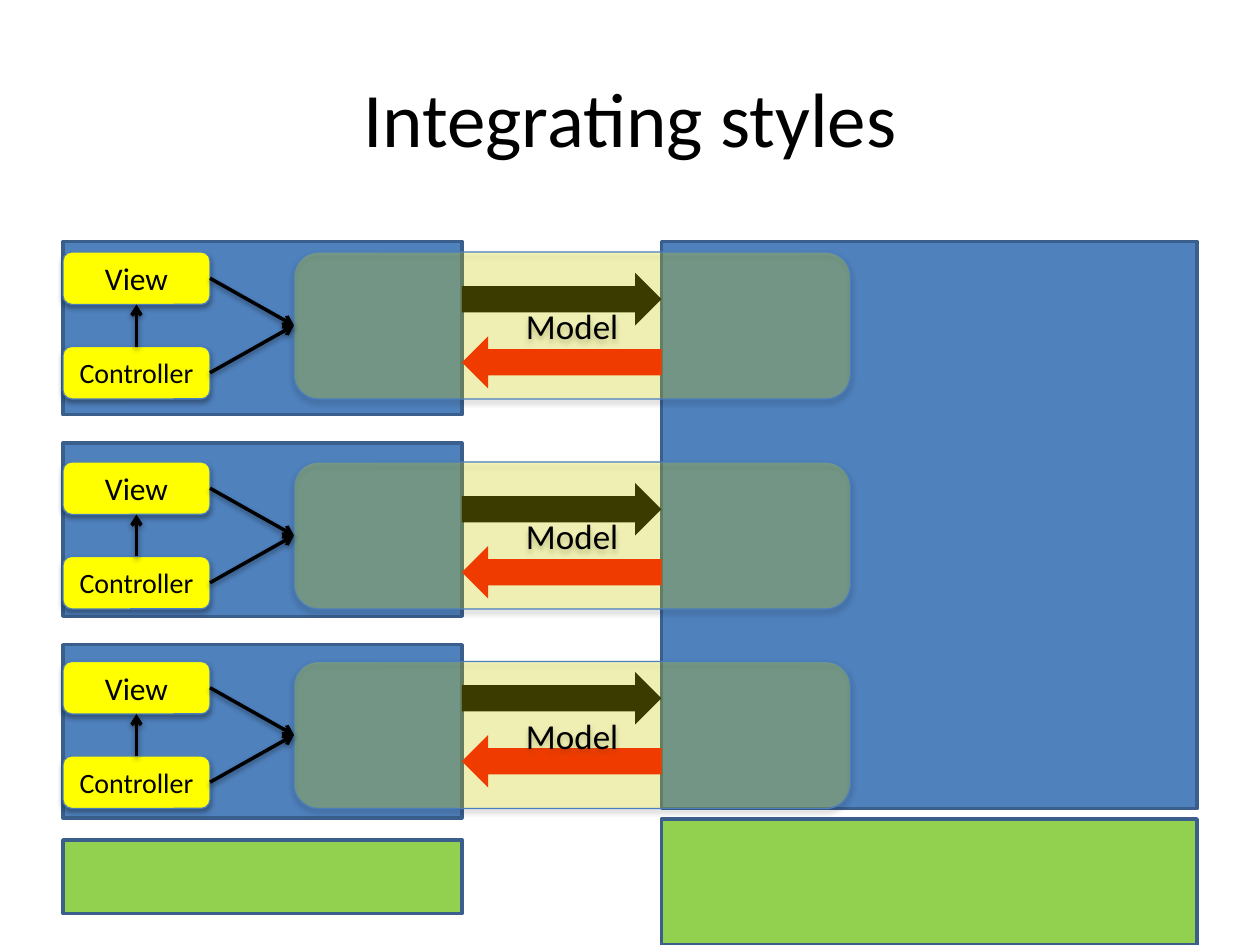
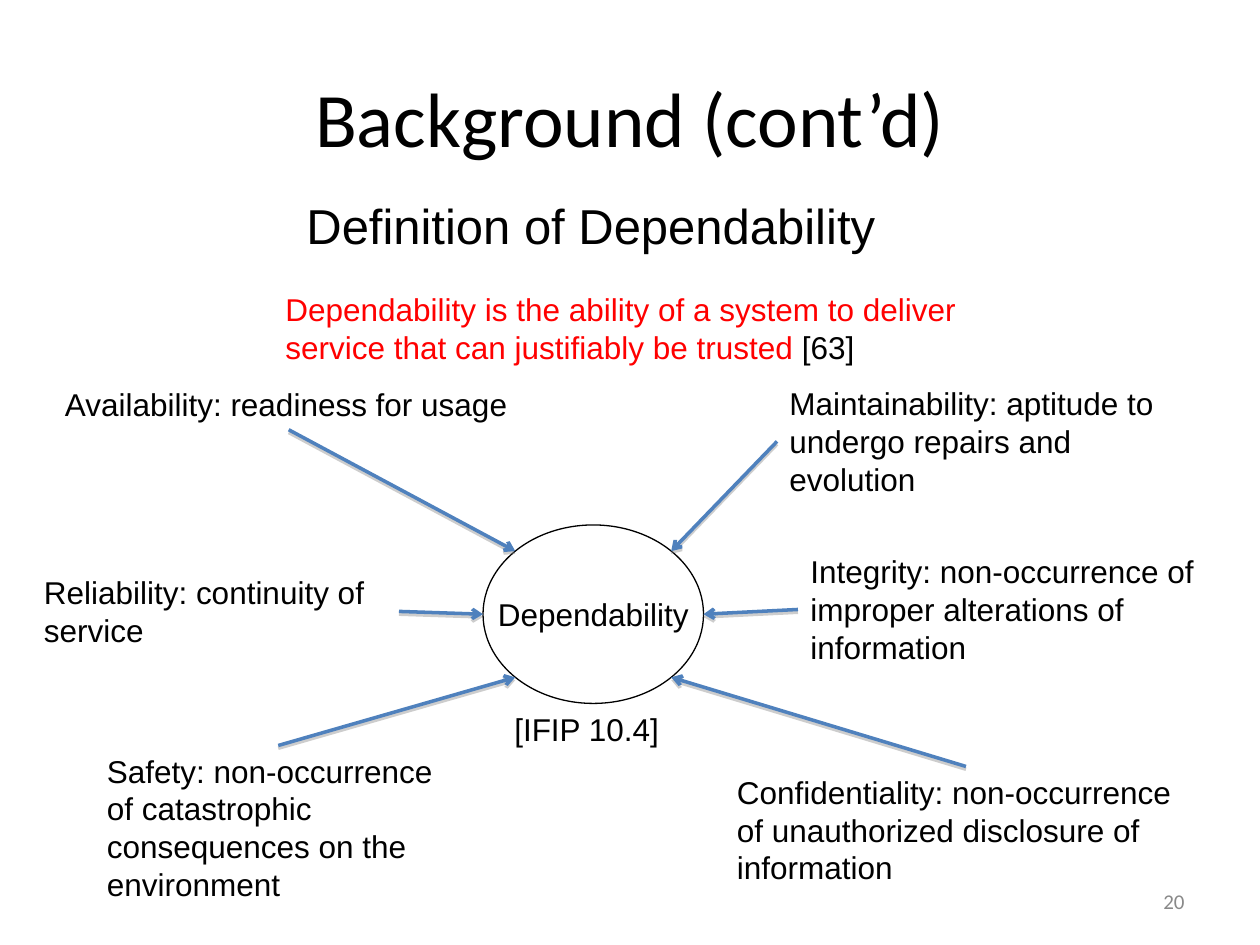
from collections import namedtuple
from math import cos, radians, sin

from lxml import etree
from pptx import Presentation
from pptx.dml.color import RGBColor
from pptx.enum.shapes import MSO_CONNECTOR, MSO_SHAPE
from pptx.enum.text import MSO_ANCHOR, PP_ALIGN
from pptx.oxml.ns import qn
from pptx.util import Inches, Pt

# Enum members
RECT, ROUNDED, OVAL = MSO_SHAPE.RECTANGLE, MSO_SHAPE.ROUNDED_RECTANGLE, MSO_SHAPE.OVAL
ARROW = MSO_SHAPE.RIGHT_ARROW
STRAIGHT = MSO_CONNECTOR.STRAIGHT
MIDDLE = MSO_ANCHOR.MIDDLE
LEFT_ALIGN, CENTER, RIGHT_ALIGN = PP_ALIGN.LEFT, PP_ALIGN.CENTER, PP_ALIGN.RIGHT
TOP_SIDE, LEFT_SIDE, BOTTOM_SIDE, RIGHT_SIDE = range(4)

# Colours and fonts
BLACK = RGBColor(0x00, 0x00, 0x00)
WHITE = RGBColor(0xFF, 0xFF, 0xFF)
RED = RGBColor(0xFF, 0x00, 0x00)
YELLOW = RGBColor(0xFF, 0xFF, 0x00)
GREEN = RGBColor(0x92, 0xD0, 0x50)
BLUE = RGBColor(0x4F, 0x81, 0xBD)
PANEL_EDGE = RGBColor(0x3A, 0x5F, 0x8C)
BOX_EDGE = RGBColor(0x4B, 0x7E, 0xBC)
GRAY = RGBColor(0x80, 0x80, 0x80)
NUMBER_GRAY = RGBColor(0x89, 0x89, 0x89)
HEADING_FONT, BODY_FONT = "Calibri", "Arial"

# Grid: 120 columns by 90 rows of equal square cells
WIDTH, HEIGHT = Inches(10), Inches(7.5)
CELL = WIDTH // 120
TITLE_ONLY = 5
Box = namedtuple("Box", "left top width height")
PAGE = Box(0, 0, 120, 90)
TITLE = Box(6, 3.6, 108, 15)
PAGE_NUMBER = Box(86, 83.4, 28, 4.8)


def inside(box, left, top, width, height):
    """Box at an offset from the corner of another box."""
    return Box(box.left + left, box.top + top, width, height)


def cells(values):
    return [round(value * CELL) for value in values]


def style_runs(para, size, font, color, align):
    para.alignment = align
    for span in para.runs:
        span.font.size = Pt(size)
        span.font.name = font
        span.font.color.rgb = color


def add_shadow(effects, color, opacity, blur, distance):
    shadow = etree.SubElement(effects, qn("a:outerShdw"), blurRad=str(Pt(blur)),
                              dist=str(Pt(distance)), dir="5400000", rotWithShape="0")
    tint = etree.SubElement(shadow, qn("a:srgbClr"), val=str(color))
    etree.SubElement(tint, qn("a:alpha"), val=str(opacity * 1000))


def add_block(page, kind, box, fill, edge=None, edge_width=2):
    shape = page.shapes.add_shape(kind, *cells(box))
    shape.shadow.inherit = False
    shape.fill.solid()
    shape.fill.fore_color.rgb = fill
    if edge is None:
        shape.line.fill.background()
    else:
        shape.line.color.rgb = edge
        shape.line.width = Pt(edge_width)
    return shape


def label_block(shape, text, size, font):
    frame = shape.text_frame
    frame.text = text
    frame.vertical_anchor = MIDDLE
    style_runs(frame.paragraphs[0], size, font, BLACK, CENTER)


def add_arrow(page, source, side, target, color, shadow_color, blur):
    """Arrow from a side of source to a (shape, side) pair or an (x, y) point."""
    joined = not isinstance(target[0], (int, float))
    end = (0, 0) if joined else cells(target)
    line = page.shapes.add_connector(STRAIGHT, 0, 0, *end)
    line.begin_connect(source, side)
    if joined:
        line.end_connect(*target)
    line.line.color.rgb = color
    line.line.width = Pt(2)
    properties = line.element.spPr
    etree.SubElement(properties.find(qn("a:ln")), qn("a:tailEnd"), type="arrow")
    add_shadow(etree.SubElement(properties, qn("a:effectLst")), shadow_color, 38, blur, 1.6)


def add_text(page, box, text, size=18, font=BODY_FONT, color=BLACK, align=LEFT_ALIGN):
    shape = page.shapes.add_textbox(*cells(box))
    frame = shape.text_frame
    frame.word_wrap = True
    frame.text = text
    for para in frame.paragraphs:
        style_runs(para, size, font, color, align)
    return shape


def add_page(deck, title):
    page = deck.slides.add_slide(deck.slide_layouts[TITLE_ONLY])
    heading = page.shapes.title
    heading.left, heading.top, heading.width, heading.height = cells(TITLE)
    heading.text_frame.text = title
    heading.text_frame.vertical_anchor = MIDDLE
    style_runs(heading.text_frame.paragraphs[0], 44, HEADING_FONT, BLACK, CENTER)
    return page


# Integrating styles

def add_panels(page, area):
    """Three client panels, one server panel and a green base under each side."""
    server = inside(area, 57, 0, 51, 54)
    clients = [inside(area, 0, 19.2 * row, 38, 16.5) for row in range(3)]
    bases = [inside(area, 0, 57, 38, 7), inside(area, 57, 55, 51, 12)]
    for box in [server, *clients]:
        add_block(page, RECT, box, BLUE, PANEL_EDGE)
    for box in bases:
        add_block(page, RECT, box, GREEN, PANEL_EDGE)


def add_exchange(page, area):
    """Black arrow to the server, red arrow back."""
    add_block(page, ARROW, inside(area, 0, 0, 19, 5), BLACK)
    add_block(page, ARROW, inside(area, 0, 6, 19, 5), RED).rotation = 180


def add_component(page, box, text, size):
    shape = add_block(page, ROUNDED, box, YELLOW, BOX_EDGE, 0.75)
    add_shadow(shape.element.spPr.find(qn("a:effectLst")), BLACK, 35, 3.1, 1.8)
    label_block(shape, text, size, HEADING_FONT)
    return shape


def add_triad(page, area):
    """View and controller on the left, both pointing at a translucent model."""
    model = add_component(page, inside(area, 22, 0, 53, 14), "Model", 20)
    tint = model.element.spPr.find(qn("a:solidFill"))[0]
    etree.SubElement(tint, qn("a:alpha"), val="23000")
    view = add_component(page, inside(area, 0, 0, 14, 5), "View", 18)
    controller = add_component(page, inside(area, 0, 9, 14, 5), "Controller", 16)
    for source, side, target in [
        (controller, TOP_SIDE, (view, BOTTOM_SIDE)),
        (controller, RIGHT_SIDE, (model, LEFT_SIDE)),
        (view, RIGHT_SIDE, (model, LEFT_SIDE)),
    ]:
        add_arrow(page, source, side, target, BLACK, BLACK, 3.1)


def build_styles(deck):
    page = add_page(deck, "Integrating styles")
    add_panels(page, inside(PAGE, 6, 23, 108, 67))
    for top in (26, 46, 64):
        add_exchange(page, inside(PAGE, 44, top, 19, 11))
    for top in (24, 44, 63):
        add_triad(page, inside(PAGE, 6, top, 75, 14))


# Background

# Wording, left, top, width, lines, side the arrow leaves, angle on the hub
ATTRIBUTES = [
    ("Availability: readiness for usage", 5, 36.1, 45, 1, BOTTOM_SIDE, 225),
    ("Reliability: continuity of service", 3, 54, 35, 2, RIGHT_SIDE, 180),
    ("Maintainability: aptitude to undergo repairs and evolution",
     74, 36, 39, 3, LEFT_SIDE, 315),
    ("Integrity: non-occurrence of improper alterations of information",
     76, 52, 40, 3, LEFT_SIDE, 0),
    ("Safety: non-occurrence of catastrophic consequences on the environment",
     9, 71, 35, 4, TOP_SIDE, 135),
    ("Confidentiality: non-occurrence of unauthorized disclosure of information",
     69, 73, 46, 3, TOP_SIDE, 45),
]


def text_height(lines):
    return 1.2 + 3.63 * lines


def add_definition(page, area):
    add_text(page, inside(area, 2, 0, 57, 6.8), "Definition of Dependability", 28)
    quote = add_text(page, inside(area, 0, 9, 68, text_height(2)),
                     "Dependability is the ability of a system to deliver\n"
                     "service that can justifiably be trusted ", color=RED)
    para = quote.text_frame.paragraphs[1]
    para.add_run().text = "[63]"
    style_runs(para, 18, BODY_FONT, RED, LEFT_ALIGN)
    para.runs[-1].font.color.rgb = BLACK


def add_hub(page, box):
    hub = add_block(page, OVAL, box, WHITE, BLACK, 0.75)
    label_block(hub, "Dependability", 18, BODY_FONT)
    hub.text_frame.word_wrap = False
    add_text(page, inside(box, 1.8, box.height, 21, text_height(1)), "[IFIP 10.4]")


def add_attributes(page, area, hub):
    """Each attribute with an arrow to its point on the hub's outline."""
    for text, left, top, width, lines, side, angle in ATTRIBUTES:
        note = add_text(page, inside(area, left, top, width, text_height(lines)), text)
        turn = radians(angle)
        point = (hub.left + hub.width / 2 * (1 + cos(turn)),
                 hub.top + hub.height / 2 * (1 + sin(turn)))
        add_arrow(page, note, side, point, BLUE, GRAY, 0)


def build_background(deck):
    page = add_page(deck, "Background (cont’d)")
    hub = inside(PAGE, 46, 50, 21, 17)
    add_definition(page, inside(PAGE, 26, 18, 68, 18))
    add_hub(page, hub)
    add_attributes(page, PAGE, hub)
    number = add_text(page, PAGE_NUMBER, "20", 12, HEADING_FONT, NUMBER_GRAY, RIGHT_ALIGN)
    number.text_frame.vertical_anchor = MIDDLE


def main():
    deck = Presentation()
    deck.slide_width, deck.slide_height = WIDTH, HEIGHT
    build_styles(deck)
    build_background(deck)
    deck.save("out.pptx")


if __name__ == "__main__":
    main()
